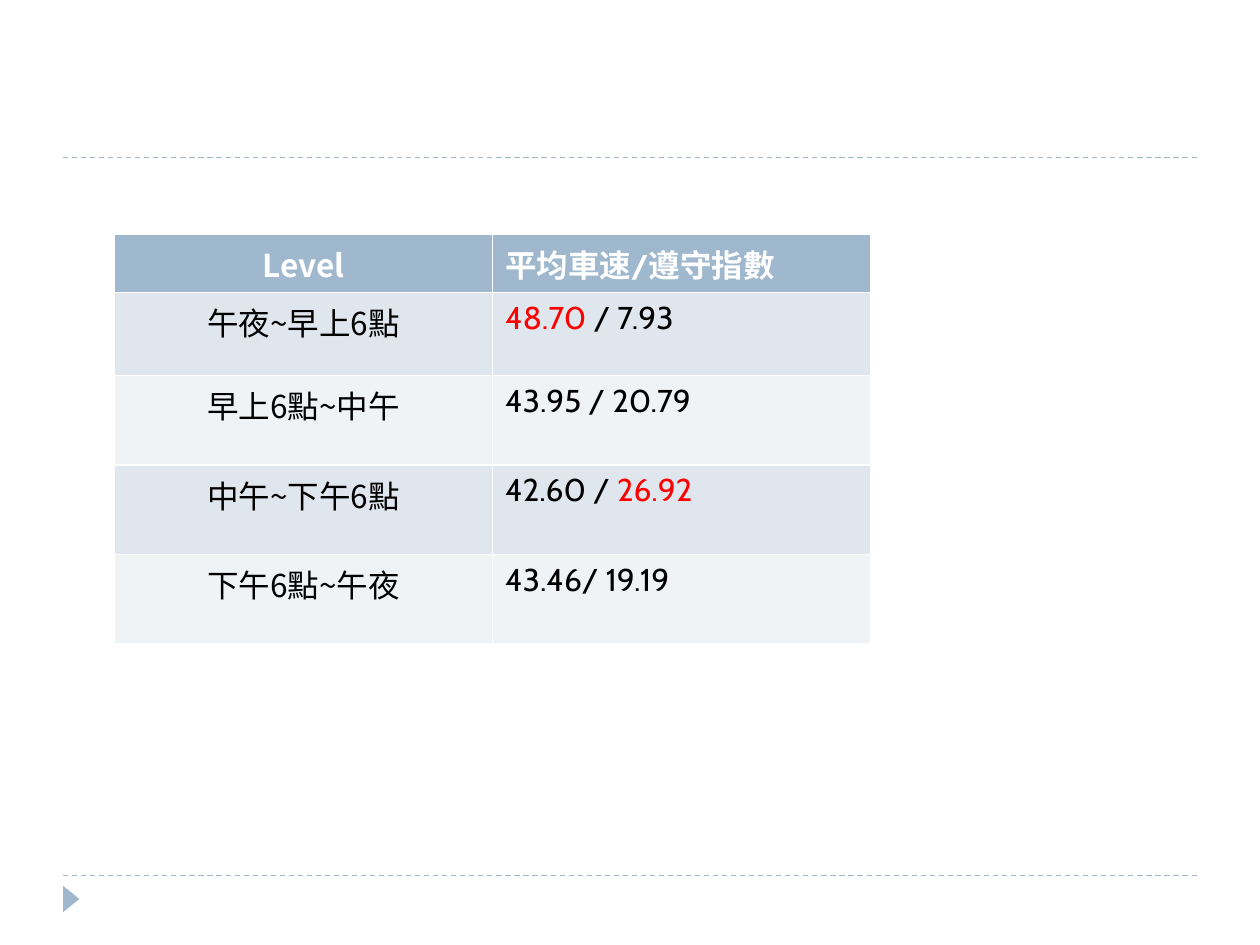
"""Build a slide with a table of average speed and compliance index by time of day."""
from typing import NamedTuple

from lxml.etree import SubElement
from pptx import Presentation
from pptx.dml.color import RGBColor
from pptx.enum.dml import MSO_LINE
from pptx.enum.shapes import MSO_CONNECTOR, MSO_SHAPE
from pptx.enum.text import PP_ALIGN
from pptx.oxml.ns import qn
from pptx.util import Inches, Pt

WHITE = RGBColor(0xFF, 0xFF, 0xFF)
BLACK = RGBColor(0x00, 0x00, 0x00)
RED = RGBColor(0xFF, 0x00, 0x00)
ACCENT = RGBColor(0x9F, 0xB8, 0xCD)
BANDS = (RGBColor(0xDF, 0xE6, 0xED), RGBColor(0xF0, 0xF3, 0xF6))
CJK_FONT = "Noto Sans CJK SC"
LATIN_FONT = "Cabin"


class Period(NamedTuple):
    label: str
    values: tuple[str, ...]
    height: float
    highlight: str = ""


HEADER = Period("Level", ("平均車速/遵守指數",), 0.45)
PERIODS = (
    Period("午夜~早上6點", ("48.70 ", "/ 7.93"), 0.66, "48.70 "),
    Period("早上6點~中午", ("43.95 / 20.79",), 0.71),
    Period("中午~下午6點", ("42.60 / ", "26.92"), 0.71, "26.92"),
    Period("下午6點~午夜", ("43.46/ 19.19",), 0.71),
)


def add_rule(slide, top: float) -> None:
    """Draw a dashed line across the slide."""
    rule = slide.shapes.add_connector(
        MSO_CONNECTOR.STRAIGHT, Inches(0.5), Inches(top), Inches(9.5), Inches(top)
    )
    rule.line.color.rgb = ACCENT
    rule.line.width = Pt(0.75)
    rule.line.dash_style = MSO_LINE.DASH
    SubElement(rule._element.spPr, qn("a:effectLst"))


def add_marker(slide) -> None:
    """Draw the footer triangle pointing right."""
    marker = slide.shapes.add_shape(
        MSO_SHAPE.ISOSCELES_TRIANGLE, Inches(0.46), Inches(7.07), Inches(0.21), Inches(0.13)
    )
    marker.rotation = 90
    marker.shadow.inherit = False
    marker.fill.solid()
    marker.fill.fore_color.rgb = ACCENT
    marker.line.fill.background()


def fill_cell(cell, texts: tuple[str, ...], font_name: str, fill: RGBColor,
              color: RGBColor, bold: bool, highlight: str = "") -> None:
    """Write and format one table cell."""
    cell.fill.solid()
    cell.fill.fore_color.rgb = fill
    paragraph = cell.text_frame.paragraphs[0]
    font = paragraph.font
    font.size = Pt(18)
    font.bold = bold
    font.name = font_name
    font.color.rgb = color
    defaults = paragraph._p.pPr.find(qn("a:defRPr"))
    SubElement(defaults, qn("a:ea")).set("typeface", CJK_FONT)
    for text in texts:
        run = paragraph.add_run()
        run.text = text
        if text == highlight:
            run.font.color.rgb = RED


def add_speed_table(slide) -> None:
    """Add the table of periods and their values."""
    rows = (HEADER, *PERIODS)
    table = slide.shapes.add_table(
        len(rows), 2, Inches(0.91), Inches(1.86), Inches(6),
        Inches(sum(row.height for row in rows)),
    ).table
    for index, row in enumerate(rows):
        is_header = index == 0
        fill = ACCENT if is_header else BANDS[(index - 1) % 2]
        color = WHITE if is_header else BLACK
        table.rows[index].height = Inches(row.height)
        label, values = table.rows[index].cells
        fill_cell(label, (row.label,), CJK_FONT, fill, color, is_header)
        label.text_frame.paragraphs[0].alignment = PP_ALIGN.CENTER
        fill_cell(values, row.values, LATIN_FONT, fill, color, is_header, row.highlight)


def main() -> None:
    """Create and save the presentation."""
    presentation = Presentation()
    presentation.slide_width = Inches(10)
    presentation.slide_height = Inches(7.5)
    slide = presentation.slides.add_slide(presentation.slide_layouts[6])
    for top in (6.95, 1.25):
        add_rule(slide, top)
    add_marker(slide)
    add_speed_table(slide)
    presentation.save("out.pptx")


if __name__ == "__main__":
    main()
